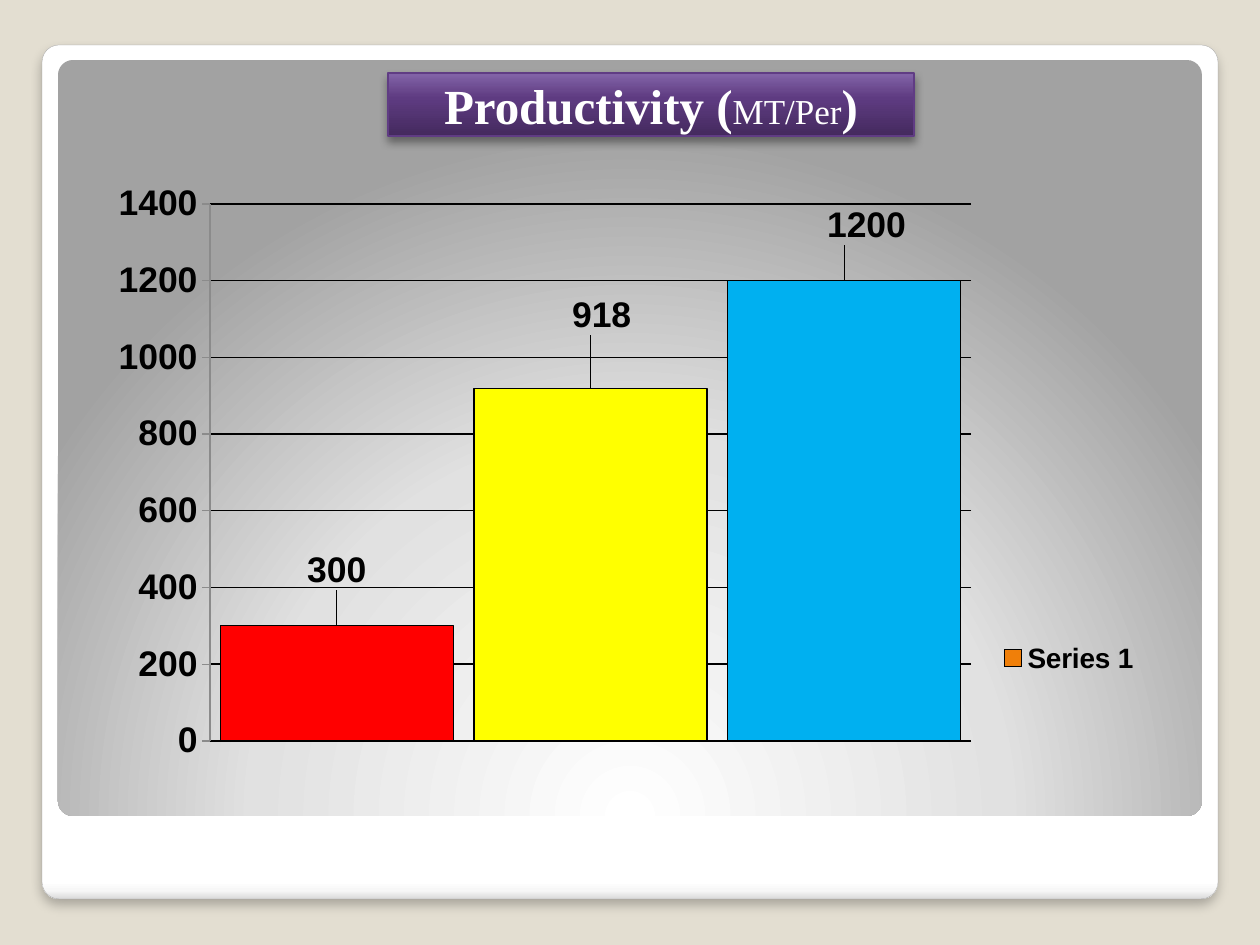
from lxml import etree
from pptx import Presentation
from pptx.chart.data import CategoryChartData
from pptx.dml.color import RGBColor
from pptx.enum.chart import XL_CHART_TYPE, XL_LABEL_POSITION, XL_LEGEND_POSITION, XL_TICK_MARK
from pptx.enum.shapes import MSO_SHAPE
from pptx.enum.text import MSO_ANCHOR, PP_ALIGN
from pptx.oxml import parse_xml
from pptx.oxml.ns import nsdecls, qn
from pptx.util import Emu, Pt

COLUMNS = XL_CHART_TYPE.COLUMN_CLUSTERED
OUTSIDE_END = XL_LABEL_POSITION.OUTSIDE_END
LEGEND_RIGHT = XL_LEGEND_POSITION.RIGHT
TICK_OUTSIDE = XL_TICK_MARK.OUTSIDE
TICK_NONE = XL_TICK_MARK.NONE
RECT, ROUND_RECT = MSO_SHAPE.RECTANGLE, MSO_SHAPE.ROUNDED_RECTANGLE
MIDDLE, CENTER = MSO_ANCHOR.MIDDLE, PP_ALIGN.CENTER

PX_PER_INCH = 126
COLORS = {
    "background": "E3DED1", "white": "FFFFFF", "black": "000000",
    "frame_line": "A4A4A4", "frame_low": "F7F7F7", "frame_edge": "DADADA",
    "panel_mid": "E1E1E1", "panel_edge": "A2A2A2",
    "title_dark": "442A5E", "title_mid": "5E3B81", "title_light": "8364A8",
    "title_line": "603C84", "axis": "8B8B8B", "series": "F07F09",
    "red": "FF0000", "yellow": "FFFF00", "blue": "00B0F0",
}
# value, bar colour, label shift as a share of the chart's width and height
BARS = [
    (300, "red", (0, -0.05)),
    (918, "yellow", (0.01, -0.08)),
    (1200, "blue", (0.02, -0.05)),
]


def px(length):
    return Emu(round(length * 914400 / PX_PER_INCH))


def rgb(name):
    return RGBColor.from_string(COLORS[name])


def set_line(line, color, width):
    line.color.rgb = rgb(color)
    line.width = Pt(width)


def set_font(font, size, name="Arial", color="black", bold=True):
    font.size, font.name, font.bold = Pt(size), name, bold
    font.color.rgb = rgb(color)


def set_gradient(shape, stops, angle=None):
    """Linear gradient at an angle, or a circle centred below the shape."""
    shape.fill.gradient()
    stop_xml = "".join(
        f'<a:gs pos="{pos * 1000}"><a:srgbClr val="{COLORS[color]}"/></a:gs>'
        for pos, color in stops)
    if angle is None:
        course = ('<a:path path="circle"><a:fillToRect l="50000" t="175000" '
                  'r="50000" b="-75000"/></a:path>')
    else:
        course = f'<a:lin ang="{angle * 60000}" scaled="0"/>'
    gradient = parse_xml(f'<a:gradFill {nsdecls("a")} rotWithShape="1">'
                         f'<a:gsLst>{stop_xml}</a:gsLst>{course}</a:gradFill>')
    properties = shape._element.spPr
    properties.replace(properties.find(qn("a:gradFill")), gradient)


def set_shadow(shape, opacity, blur, distance):
    effects = shape._element.spPr.find(qn("a:effectLst"))
    effects.append(parse_xml(
        f'<a:outerShdw {nsdecls("a")} blurRad="{Pt(blur)}" dist="{Pt(distance)}" '
        f'dir="5400000" algn="ctr" rotWithShape="0"><a:srgbClr val="{COLORS["black"]}">'
        f'<a:alpha val="{opacity * 1000}"/></a:srgbClr></a:outerShdw>'))


def add_box(slide, kind, box, stops, angle=None, line=None, shadow=None):
    shape = slide.shapes.add_shape(kind, *map(px, box))
    shape.shadow.inherit = False
    set_gradient(shape, stops, angle)
    if kind == ROUND_RECT:
        shape.adjustments[0] = 0.02
    if line:
        set_line(shape.line, *line)
    else:
        shape.line.fill.background()
    if shadow:
        set_shadow(shape, *shadow)
    return shape


def add_run(paragraph, text, **style):
    run = paragraph.add_run()
    run.text = text
    set_font(run.font, **style)


def set_layout(parent, index, **places):
    """Put a manual chart layout at the given child index."""
    for old in parent.findall(qn("c:layout")):
        parent.remove(old)
    layout = parse_xml(f'<c:layout {nsdecls("c")}><c:manualLayout/></c:layout>')
    for tag, value in places.items():
        etree.SubElement(layout[0], qn(f"c:{tag}")).set("val", str(value))
    parent.insert(index, layout)


def add_title(slide):
    banner = add_box(slide, RECT, (388, 73, 526, 63),
                     [(0, "title_dark"), (60, "title_mid"), (100, "title_light")],
                     angle=270, line=("title_line", 0.75), shadow=(40, 5.2, 3))
    banner.text_frame.vertical_anchor = MIDDLE
    paragraph = banner.text_frame.paragraphs[0]
    paragraph.alignment = CENTER
    for text, size, bold in [("Productivity (", 28, True), ("MT/Per", 20, False), (")", 28, True)]:
        add_run(paragraph, text, size=size, bold=bold, name="Times New Roman", color="white")


def style_axes(chart):
    chart.category_axis.visible = False
    axis = chart.value_axis
    axis.minimum_scale, axis.maximum_scale, axis.major_unit = 0, 1400, 200
    axis.major_tick_mark, axis.minor_tick_mark = TICK_OUTSIDE, TICK_NONE
    axis.tick_labels.number_format = "0"
    axis.tick_labels.number_format_is_linked = False
    set_font(axis.tick_labels.font, 20.3)
    set_line(axis.format.line, "axis", 0.75)
    axis.has_major_gridlines = True
    set_line(axis.major_gridlines.format.line, "black", 0.92)


def style_bars(plot):
    plot.gap_width = 9
    plot.vary_by_categories = False
    series = plot.series[0]
    series.format.fill.solid()
    series.format.fill.fore_color.rgb = rgb("series")
    set_line(series.format.line, "black", 0.75)
    labels = series.data_labels
    labels.show_value = True
    labels.number_format, labels.number_format_is_linked = "0", False
    set_font(labels.font, 20.3)
    for number, (_, color, (shift_x, shift_y)) in enumerate(BARS):
        point = series.points[number]
        point.format.fill.solid()
        point.format.fill.fore_color.rgb = rgb(color)
        set_line(point.format.line, "black", 0.75)
        point.data_label.position = OUTSIDE_END
        set_font(point.data_label.font, 20.3)
        set_layout(labels._element.findall(qn("c:dLbl"))[number], 1, x=shift_x, y=shift_y)


def add_productivity_chart(slide):
    data = CategoryChartData(number_format="0")
    data.categories = ["1", "2", "3"]
    data.add_series("Series 1", [value for value, _, _ in BARS])
    chart = slide.shapes.add_chart(COLUMNS, *map(px, (73, 168, 1113, 609)), data).chart
    chart.has_title = False
    set_font(chart.font, 16.6, name="Calibri", bold=False)
    style_axes(chart)
    style_bars(chart.plots[0])
    set_layout(chart._chartSpace.chart.plotArea, 0, layoutTarget="inner", xMode="edge",
               yMode="edge", x=0.123, y=0.059, w=0.684, h=0.882)
    # Legend beside the lower part of the plot
    chart.has_legend = True
    chart.legend.position = LEGEND_RIGHT
    chart.legend.include_in_layout = False
    set_font(chart.legend.font, 16)
    set_layout(chart.legend._element, 1, xMode="edge", yMode="edge",
               x=0.83, y=0.77, w=0.13, h=0.07)


def main():
    deck = Presentation()
    deck.slide_width, deck.slide_height = px(1260), px(945)
    slide = deck.slides.add_slide(deck.slide_layouts[6])
    slide.background.fill.solid()
    slide.background.fill.fore_color.rgb = rgb("background")
    # White frame and grey panel
    add_box(slide, ROUND_RECT, (42, 45, 1176, 854),
            [(0, "white"), (98, "white"), (99, "frame_low"), (100, "frame_edge")],
            angle=90, line=("frame_line", 0.16), shadow=(25, 6, 4))
    add_box(slide, ROUND_RECT, (58, 60, 1144, 756),
            [(0, "white"), (55, "panel_mid"), (100, "panel_edge")])
    add_title(slide)
    add_productivity_chart(slide)
    deck.save("out.pptx")


if __name__ == "__main__":
    main()
